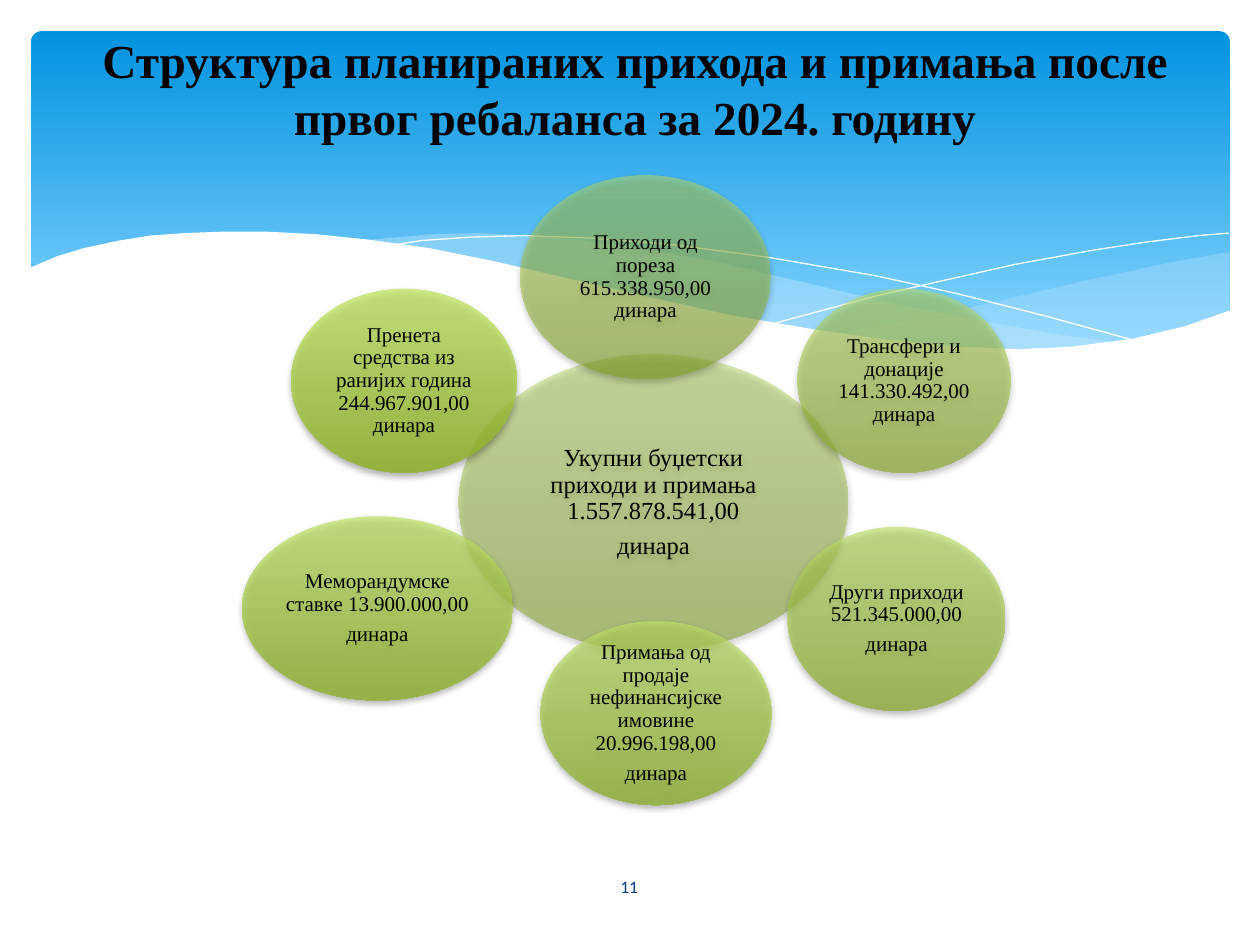
import pptx
import pptx.util
import pptx.dml.color
import pptx.enum.shapes
import pptx.enum.text
import pptx.oxml.ns
from lxml import etree

Cm, Pt = pptx.util.Cm, pptx.util.Pt
qn = pptx.oxml.ns.qn

# Content
TITLE = "Структура планираних прихода и примања после првог ребаланса за 2024. годину"
PAGE = "11"
SERIF, SANS = "Times New Roman", "Calibri"
COLORS = {"black": "000000", "white": "FFFFFF", "navy": "073E87",
          "sky": "0293E0", "pale": "83D3FE", "mist": "C6E7FC"}

# Bubbles: box in cm, text size, gradient, paragraphs ("\n" is a line break)
BUBBLES = [
    ((9.25, 7.14, 7.85, 5.99), 14, ("B5D763", "80A11F"),
     ["Укупни буџетски приходи и примања 1.557.878.541,00", "динара"]),
    ((10.49, 3.53, 5.05, 4.11), 12, ("B7DA64", "82A420"),
     ["Приходи од\nпореза 615.338.950,00 динара"]),
    ((16.08, 5.82, 4.29, 3.71), 12, ("BADD66", "85A720"),
     ["Трансфери и донације 141.330.492,00 динара"]),
    ((15.88, 10.62, 4.39, 3.71), 12, ("BCE067", "87AA21"),
     ["Други приходи 521.345.000,00", "динара"]),
    ((10.9, 12.52, 4.65, 3.71), 12, ("BFE268", "89AD22"),
     ["Примања од продаје нефинансијске имовине 20.996.198,00", "динара"]),
    ((4.88, 10.41, 5.46, 3.71), 12, ("C1E56A", "8BAF23"),
     ["Меморандумске ставке 13.900.000,00", "динара"]),
    ((5.87, 5.82, 4.55, 3.71), 12, ("C4E86B", "8EB223"),
     ["Пренета средства из ранијих година 244.967.901,00 динара"]),
]

# Waves in cm: fill, opacity in percent, outline points
WAVES = [
    ("mist", 29, [
        (24.79, 5.08), (23.75, 5.26), (21.87, 5.66), (19.79, 6.15), (17.93, 6.53),
        (16.79, 6.73), (18.26, 6.91), (19.53, 7.04), (20.68, 7.06), (21.92, 6.99),
        (22.99, 6.83), (23.93, 6.58), (24.79, 6.27)]),
    ("mist", 40, [
        (22.68, 6.93), (21.26, 6.73), (19.69, 6.45), (17.93, 6.1), (15.98, 5.64),
        (14.45, 5.28), (13.06, 5.03), (11.81, 4.85), (10.67, 4.75), (9.65, 4.7),
        (8.74, 4.72), (7.26, 4.85), (8.69, 5.05), (10.26, 5.36), (11.4, 5.64),
        (13.46, 6.1), (15.27, 6.48), (16.89, 6.76), (18.34, 6.96), (19.63, 7.04),
        (20.78, 7.06), (21.77, 7.04)]),
    (None, 100, [
        (7.85, 4.95), (8.51, 4.85), (9.5, 4.78), (10.57, 4.75), (11.91, 4.8),
        (13.54, 4.93), (15.44, 5.18), (17.65, 5.56), (19.3, 5.92), (21.11, 6.38),
        (23.04, 6.91)]),
    (None, 100, [
        (15.57, 6.53), (17.65, 5.97), (19, 5.66), (20.47, 5.33), (22, 5.05),
        (23.11, 4.88), (24.16, 4.75), (24.77, 4.7)]),
    ("white", 100, [
        (24.82, 6.25), (23.88, 6.58), (22.83, 6.83), (21.59, 6.99), (20.55, 7.04),
        (19.33, 6.99), (17.98, 6.86), (16.46, 6.65), (14.71, 6.35), (12.78, 5.92),
        (11.35, 5.59), (9.93, 5.26), (8.64, 5), (7.42, 4.83), (6.35, 4.72),
        (5.36, 4.67), (4.5, 4.67), (3.71, 4.7), (3.02, 4.75), (2.41, 4.85),
        (1.7, 5), (1.17, 5.16), (0.58, 5.41), (0.58, 8.36), (24.82, 8.36)]),
]


def rgb(code):
    return pptx.dml.color.RGBColor.from_string(code)


def fade(shape, alpha):
    """Give every colour of the shape this opacity in percent."""
    for clr in list(shape.element.spPr.iter(qn("a:srgbClr"))):
        etree.SubElement(clr, qn("a:alpha"), val=str(alpha * 1000))


def blend(shape, top, low, end=1.0):
    """Fill from top to bottom, without an outline."""
    shape.shadow.inherit = False
    shape.line.fill.background()
    shape.fill.gradient()
    shape.fill.gradient_angle = 270
    for stop, code, pos in zip(shape.fill.gradient_stops, (top, low), (0, end)):
        stop.color.rgb = rgb(code)
        stop.position = pos


def shade(shape):
    """Cast a soft shadow straight down."""
    glow = shape.element.spPr.find(qn("a:effectLst"))
    cast = etree.SubElement(glow, qn("a:outerShdw"), blurRad=str(Pt(4)),
                            dist=str(Pt(2)), dir="5400000", rotWithShape="0")
    clr = etree.SubElement(cast, qn("a:srgbClr"), val=COLORS["black"])
    etree.SubElement(clr, qn("a:alpha"), val="38000")


def write(shape, paras, size, font, color, bold=False):
    frame = shape.text_frame
    frame.word_wrap = True
    frame.vertical_anchor = pptx.enum.text.MSO_ANCHOR.MIDDLE
    for i, text in enumerate(paras):
        para = frame.add_paragraph() if i else frame.paragraphs[0]
        para.alignment = pptx.enum.text.PP_ALIGN.CENTER
        for j, line in enumerate(text.split("\n")):
            if j:
                para.add_line_break()
            run = para.add_run()
            run.text = line
            run.font.size, run.font.name, run.font.bold = Pt(size), font, bold
            run.font.color.rgb = rgb(COLORS[color])
    return frame


deck = pptx.Presentation()
deck.slide_width, deck.slide_height = Cm(25.4), Cm(19.05)
shapes = deck.slides.add_slide(deck.slide_layouts[6]).shapes
KIND = pptx.enum.shapes.MSO_SHAPE

# Blue panel
panel = shapes.add_shape(KIND.ROUNDED_RECTANGLE,
                         Cm(0.63), Cm(0.63), Cm(24.16), Cm(6.86))
panel.adjustments[0] = 0.03
blend(panel, COLORS["sky"], COLORS["pale"], 0.9)

# Waves over the panel: filled areas and hairlines
for fill, alpha, spots in WAVES:
    spots = [(Cm(x), Cm(y)) for x, y in spots]
    pen = shapes.build_freeform(*spots[0])
    pen.add_line_segments(spots[1:], close=bool(fill))
    wave = pen.convert_to_shape()
    wave.shadow.inherit = False
    if fill:
        wave.fill.solid()
        wave.fill.fore_color.rgb = rgb(COLORS[fill])
        wave.line.fill.background()
        fade(wave, alpha)
    else:
        wave.fill.background()
        wave.line.color.rgb = rgb(COLORS["white"])
        wave.line.width = Pt(0)

# Page number and title
page = shapes.add_textbox(Cm(11.07), Cm(17.37), Cm(3.23), Cm(1.02))
write(page, [PAGE], 10, SANS, "navy")
head = shapes.add_textbox(Cm(1.37), Cm(0.69), Cm(22.86), Cm(2.16))
write(head, [TITLE], 27, SERIF, "black", True)

# Bubbles, each less transparent than the one before
for i, (box, size, tones, paras) in enumerate(BUBBLES):
    ball = shapes.add_shape(KIND.OVAL, *map(Cm, box))
    blend(ball, *tones)
    fade(ball, 50 + 5 * i)
    shade(ball)
    frame = write(ball, paras, size, SERIF, "black")
    frame.margin_left = frame.margin_right = Cm(0.05)
    frame.margin_top = frame.margin_bottom = Cm(0.05)
    for para in frame.paragraphs:
        para.line_spacing = 0.9
        para.space_after = Pt(0.35 * size)

deck.save("out.pptx")
